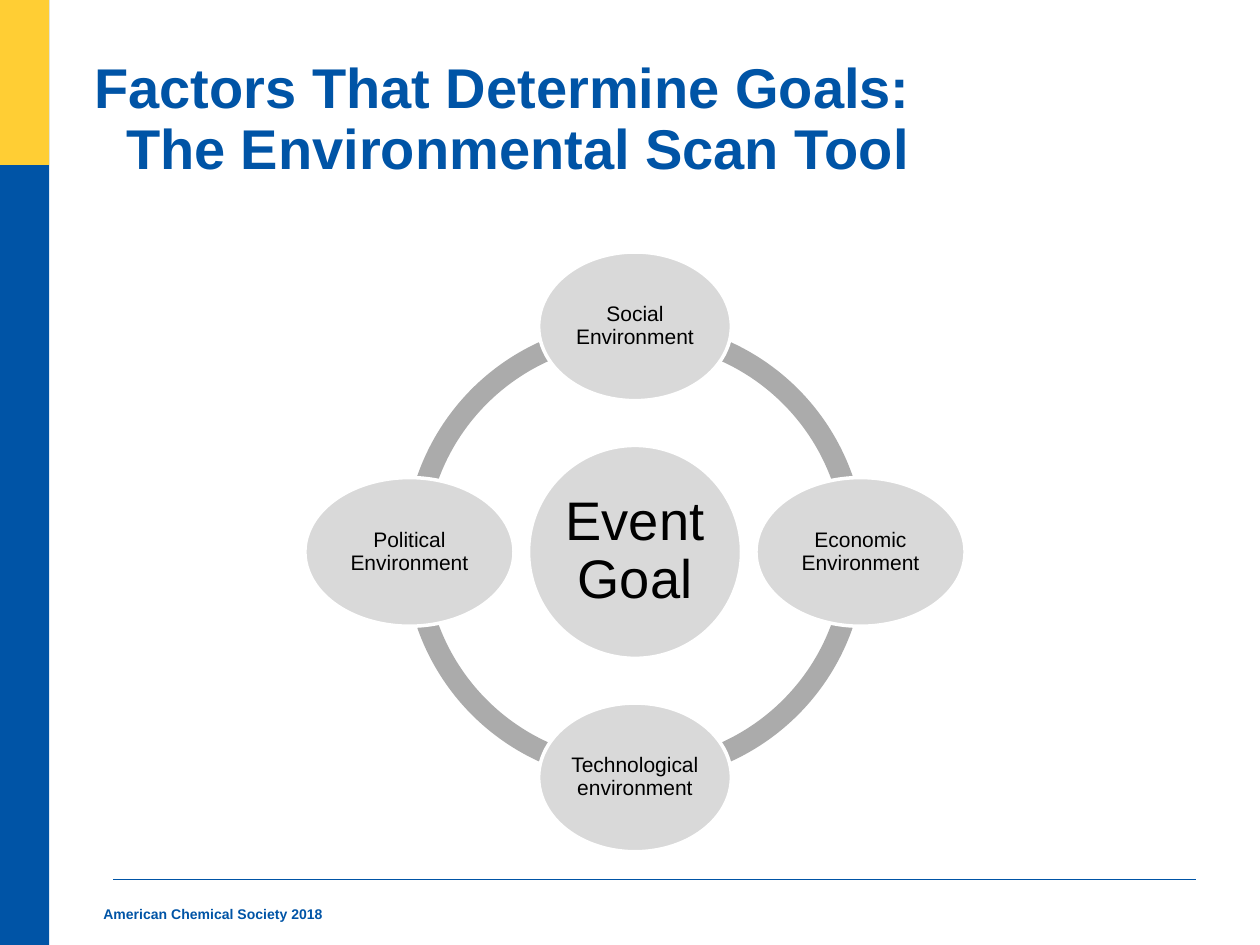
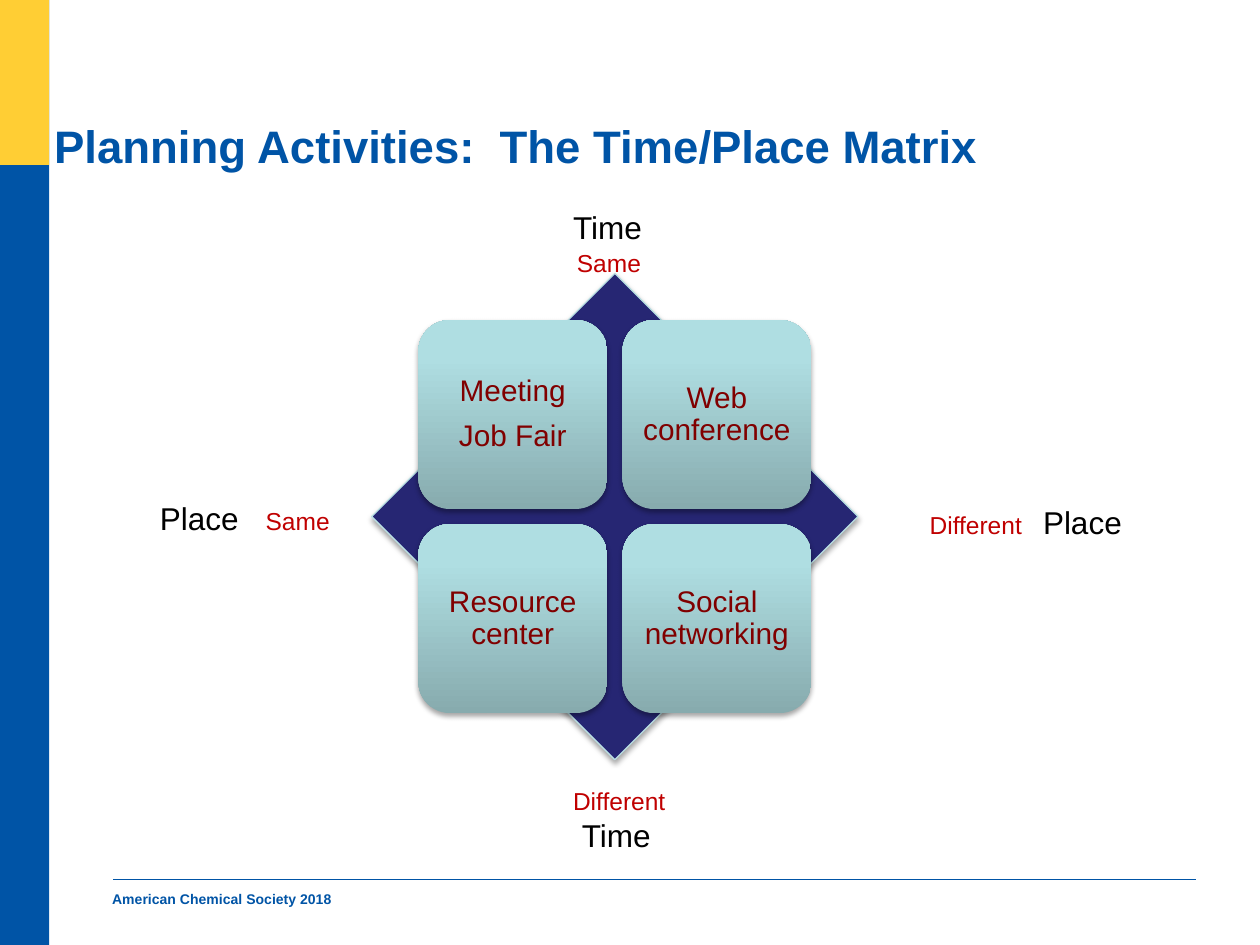
"""Build two slides on event goals and activity planning."""
from copy import deepcopy

from lxml.etree import SubElement
from pptx import Presentation
from pptx.dml.color import RGBColor
from pptx.enum.shapes import MSO_CONNECTOR, MSO_SHAPE as Preset
from pptx.enum.text import MSO_ANCHOR as Anchor, PP_ALIGN as Align
from pptx.oxml.ns import qn
from pptx.util import Inches, Pt

COLOURS = {
    "blue": "0054A6", "gold": "FFCE34", "white": "FFFFFF", "black": "000000",
    "ring": "ABABAB", "bubble": "D9D9D9", "navy": "262673", "pale": "BBE0E3",
    "red": "C00000", "maroon": "800000",
    "tile dark": "87ABAE", "tile mid": "AFDEE2", "tile light": "AFE0E4",
}
STYLES = {
    "scan title": (32, "blue", True),
    "matrix title": (26, "blue", True),
    "footer": (8, "blue", True),
    "goal": (31, "black", False),
    "factor": (12, "black", False),
    "activity": (17, "maroon", False),
    "axis": (18, "black", False),
    "end": (14, "red", False),
}
FONT = "Arial"
FOOTER = "American Chemical Society 2018"

SCAN_TITLE = [
    (0, [("Factors That Determine Goals:", "scan title")]),
    (0.25, [("The Environmental Scan Tool", "scan title")]),
]
GOAL = "Event Goal"
FACTORS = [
    ("Social Environment", 0, -1, 1.53),
    ("Economic Environment", 1, 0, 1.66),
    ("Technological environment", 0, 1, 1.53),
    ("Political Environment", -1, 0, 1.66),
]
RING_CENTRE = (5.04, 4.38)
RING_SIZE, GOAL_SIZE, FACTOR_HEIGHT, ORBIT = 3.66, 1.69, 1.18, 1.79
QUARTER_TURN, RING_THICKNESS = 54, 0.046

MATRIX_TITLE = [(0, [("Planning Activities:  The Time/Place Matrix", "matrix title")])]
ACTIVITIES = [
    [["Meeting", "Job Fair"], ["Web conference"]],
    [["Resource center"], ["Social networking"]],
]
MATRIX_CENTRE = (4.88, 4.1)
DIAMOND_SIZE, TILE_SIZE, TILE_PITCH = 3.86, 1.5, 1.62
TILE_STOPS = [(0, "tile dark"), (0.8, "tile mid"), (1, "tile light")]
AXIS_LABELS = [
    ((1.17, 3.91, 0.83, 0.4), [(0, [("Place", "axis")])]),
    ((4.45, 1.6, 0.76, 0.4), [(0, [("Time", "axis")])]),
    ((4.48, 1.92, 0.71, 0.34), [(0, [("Same", "end")])]),
    ((4.45, 6.19, 0.94, 0.64), [(0, [("Different", "end")]), (0.07, [("Time", "axis")])]),
    ((2.01, 3.97, 0.72, 0.34), [(0, [("Same", "end")])]),
    ((7.28, 3.94, 1.74, 0.4), [(0, [("Different\t", "end"), ("Place", "axis")])]),
]
PLACE_TAB = 0.9


def colour(name):
    return RGBColor.from_string(COLOURS[name])


def around(centre, width, height):
    return centre[0] - width / 2, centre[1] - height / 2, width, height


def add_tab(paragraph, position):
    tabs = SubElement(paragraph._p.get_or_add_pPr(), qn("a:tabLst"))
    SubElement(tabs, qn("a:tab"), pos=str(Inches(position)), algn="l")


def write(shape, lines, inset=0, anchor=Anchor.TOP, align=Align.LEFT,
          spacing=None, gap=0, wrap=True):
    frame = shape.text_frame
    frame.word_wrap = wrap
    frame.vertical_anchor = anchor
    horizontal, vertical = inset if isinstance(inset, tuple) else (inset, inset)
    frame.margin_left = frame.margin_right = Inches(horizontal)
    frame.margin_top = frame.margin_bottom = Inches(vertical)
    for index, (indent, spans) in enumerate(lines):
        paragraph = frame.add_paragraph() if index else frame.paragraphs[0]
        paragraph.alignment = align
        if spacing:
            paragraph.line_spacing = spacing
        if index and gap:
            paragraph.space_before = Pt(gap)
        if indent:
            paragraph._p.get_or_add_pPr().set("marL", str(Inches(indent)))
        if any("\t" in text for text, _ in spans):
            add_tab(paragraph, PLACE_TAB)
        for text, style in spans:
            size, ink, bold = STYLES[style]
            span = paragraph.add_run()
            span.text = text
            span.font.name, span.font.size, span.font.bold = FONT, Pt(size), bold
            span.font.color.rgb = colour(ink)


def add_text(page, place, lines, **options):
    box = page.shapes.add_textbox(*map(Inches, place))
    write(box, lines, **options)


def add_figure(page, preset, place, fill=None, line=None, weight=0.75):
    shape = page.shapes.add_shape(preset, *map(Inches, place))
    shape.shadow.inherit = False
    if fill:
        shape.fill.solid()
        shape.fill.fore_color.rgb = colour(fill)
    if line:
        shape.line.color.rgb = colour(line)
        shape.line.width = Pt(weight)
    else:
        shape.line.fill.background()
    return shape


def add_soft_shadow(shape):
    effects = shape._element.spPr.find(qn("a:effectLst"))
    shadow = SubElement(effects, qn("a:outerShdw"), blurRad=str(Pt(3.1)),
                        dist=str(Pt(1.8)), dir="5400000", rotWithShape="0")
    ink = SubElement(shadow, qn("a:srgbClr"), val=COLOURS["black"])
    SubElement(ink, qn("a:alpha"), val="35000")


def fill_tile(shape):
    shape.fill.gradient()
    shape.fill.gradient_angle = 90
    stops = shape._element.spPr.find(".//" + qn("a:gsLst"))
    stops.append(deepcopy(stops[-1]))
    for stop, (position, name) in zip(shape.fill.gradient_stops, TILE_STOPS):
        stop.position = position
        stop.color.rgb = colour(name)


def add_page(deck, title, title_place, footer_place):
    page = deck.slides.add_slide(deck.slide_layouts[6])
    add_figure(page, Preset.RECTANGLE, (0, 0, 0.39, 7.5), "blue")
    add_figure(page, Preset.RECTANGLE, (0, 0, 0.39, 1.31), "gold")
    rule = page.shapes.add_connector(
        MSO_CONNECTOR.STRAIGHT, *map(Inches, (0.9, 6.98, 9.49, 6.98)))
    rule.line.color.rgb = colour("blue")
    rule.line.width = Pt(0.75)
    SubElement(rule._element.spPr, qn("a:effectLst"))
    add_text(page, title_place, title, anchor=Anchor.BOTTOM, spacing=0.9)
    add_text(page, footer_place, [(0, [(FOOTER, "footer")])])
    return page


def add_bubble(page, centre, width, height, text, style, inset):
    bubble = add_figure(page, Preset.OVAL, around(centre, width, height),
                        "bubble", "white", 2)
    write(bubble, [(0, [(text, style)])], inset=inset, anchor=Anchor.MIDDLE,
          align=Align.CENTER, spacing=0.9)


def build_scan(deck):
    page = add_page(deck, SCAN_TITLE, (0.75, 0.41, 6.85, 1.03), (0.82, 7.19, 3.17, 0.31))
    for quarter in range(4):
        arc = add_figure(page, Preset.BLOCK_ARC,
                         around(RING_CENTRE, RING_SIZE, RING_SIZE), "ring")
        arc.adjustments[0] = quarter * QUARTER_TURN
        arc.adjustments[1] = (quarter + 1) % 4 * QUARTER_TURN
        arc.adjustments[2] = RING_THICKNESS
    add_bubble(page, RING_CENTRE, GOAL_SIZE, GOAL_SIZE, GOAL, "goal", 0.04)
    for text, across, down, width in FACTORS:
        centre = (RING_CENTRE[0] + across * ORBIT, RING_CENTRE[1] + down * ORBIT)
        add_bubble(page, centre, width, FACTOR_HEIGHT, text, "factor", 0.02)


def build_matrix(deck):
    page = add_page(deck, MATRIX_TITLE, (0.43, 0.35, 7.64, 1.03), (0.89, 7.07, 3.17, 0.31))
    diamond = add_figure(page, Preset.DIAMOND,
                         around(MATRIX_CENTRE, DIAMOND_SIZE, DIAMOND_SIZE), "navy", "pale")
    add_soft_shadow(diamond)
    for row, activities in enumerate(ACTIVITIES):
        for column, names in enumerate(activities):
            centre = (MATRIX_CENTRE[0] + (column - 0.5) * TILE_PITCH,
                      MATRIX_CENTRE[1] + (row - 0.5) * TILE_PITCH)
            tile = add_figure(page, Preset.ROUNDED_RECTANGLE,
                              around(centre, TILE_SIZE, TILE_SIZE))
            fill_tile(tile)
            add_soft_shadow(tile)
            write(tile, [(0, [(name, "activity")]) for name in names], inset=0.07,
                  anchor=Anchor.MIDDLE, align=Align.CENTER, spacing=0.9, gap=7)
    for place, lines in AXIS_LABELS:
        add_text(page, place, lines, inset=(0.1, 0.05), wrap=False)


def main():
    deck = Presentation()
    deck.slide_width, deck.slide_height = Inches(10), Inches(7.5)
    build_scan(deck)
    build_matrix(deck)
    deck.save("out.pptx")


if __name__ == "__main__":
    main()
